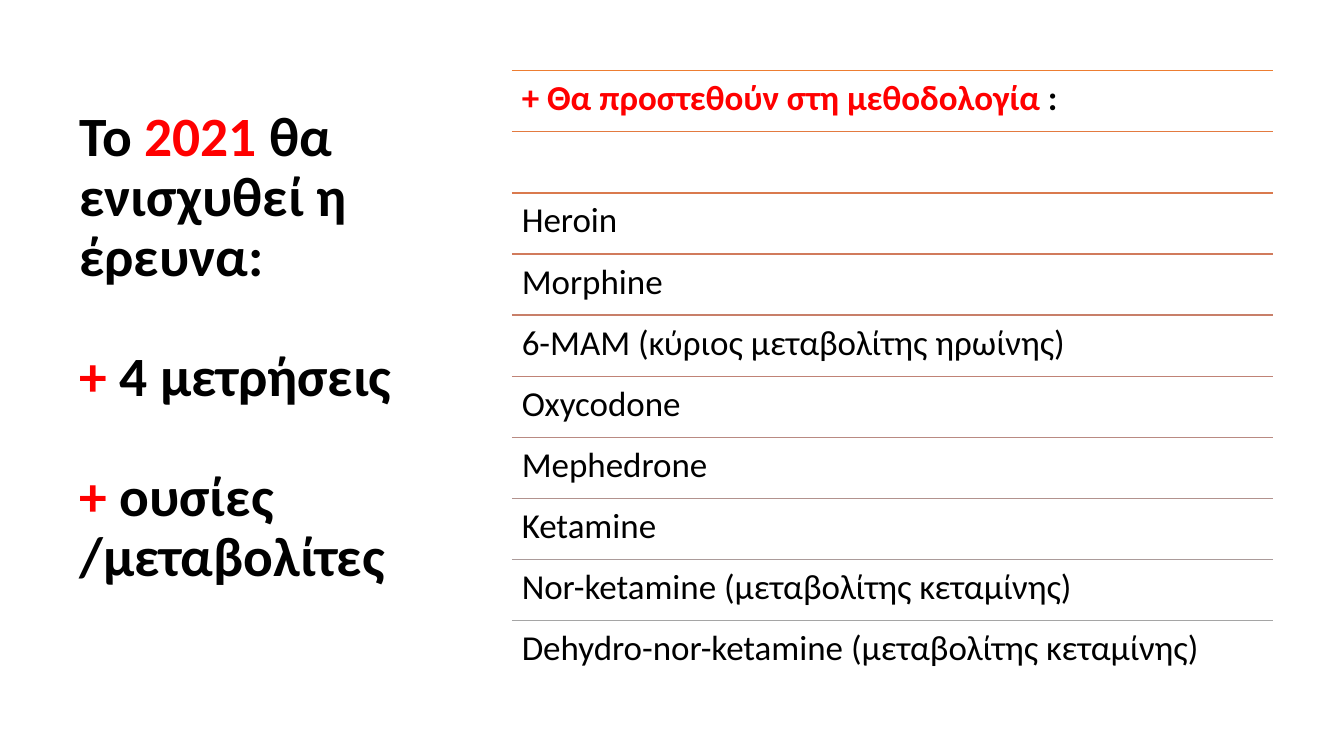
from colorsys import hls_to_rgb
from dataclasses import dataclass

from lxml.etree import SubElement
from pptx import Presentation
from pptx.dml.color import RGBColor
from pptx.enum.shapes import MSO_CONNECTOR
from pptx.enum.text import MSO_ANCHOR, MSO_AUTO_SIZE, PP_ALIGN
from pptx.oxml.ns import qn
from pptx.util import Cm, Pt


@dataclass(frozen=True)
class Theme:
    font: str = "Calibri"
    title_size: float = 39.6
    row_size: float = 25
    black: RGBColor = RGBColor(0x00, 0x00, 0x00)
    red: RGBColor = RGBColor(0xFF, 0x00, 0x00)
    # Rules fade from orange to grey: hue, lightness, saturation
    rule_first: tuple = (0.0674, 0.5608, 0.8393)
    rule_last: tuple = (0, 0.6471, 0)


theme = Theme()


def write_spans(para, spans, size, bold):
    """Fill a paragraph with (text, colour) spans."""
    para.alignment = PP_ALIGN.LEFT
    para.line_spacing = 0.9
    for text, color in spans:
        span = para.add_run()
        span.text = text
        span.font.name = theme.font
        span.font.size = Pt(size)
        span.font.bold = bold
        span.font.color.rgb = color


deck = Presentation()
deck.slide_width, deck.slide_height = Cm(33.87), Cm(19.05)
page = deck.slides.add_slide(deck.slide_layouts[5])

# Title: three statements, one line apart
title = page.shapes.title
title.left, title.top, title.width, title.height = Cm(1.75), Cm(1.78), Cm(9.5), Cm(15.52)
frame = title.text_frame
frame.word_wrap = True
frame.auto_size = MSO_AUTO_SIZE.NONE
frame.vertical_anchor = MSO_ANCHOR.MIDDLE
frame.margin_left = frame.margin_right = Cm(0.25)
frame.margin_top = Cm(0.13)
frame.margin_bottom = Cm(1.65)
statements = [
    [("Το ", theme.black), ("2021", theme.red), (" θα ενισχυθεί η έρευνα:", theme.black)],
    [("+ ", theme.red), ("4 μετρήσεις", theme.black)],
    [("+ ", theme.red), ("ουσίες /μεταβολίτες", theme.black)],
]
for number, spans in enumerate(statements):
    para = frame.add_paragraph() if number else frame.paragraphs[0]
    para.space_before = Pt(43 if number else 0)
    write_spans(para, spans, theme.title_size, True)

# Substance list: a rule above every row, the second row empty
substances = [
    "Heroin",
    "Morphine",
    "6-MAM (κύριος μεταβολίτης ηρωίνης)",
    "Oxycodone",
    "Mephedrone",
    "Ketamine",
    "Nor-ketamine (μεταβολίτης κεταμίνης)",
    "Dehydro-nor-ketamine (μεταβολίτης κεταμίνης)",
]
heading = [("+ Θα προστεθούν στη μεθοδολογία ", theme.red), (":", theme.black)]
rows = [heading, []] + [[(name, theme.black)] for name in substances]
left, top, width, pitch = Cm(12.9), Cm(1.78), Cm(19.18), Cm(1.54)

for number, spans in enumerate(rows):
    row_top = top + number * pitch
    share = number / (len(rows) - 1)
    shade = [a + (b - a) * share for a, b in zip(theme.rule_first, theme.rule_last)]
    rule = page.shapes.add_connector(
        MSO_CONNECTOR.STRAIGHT, left, row_top, left + width, row_top)
    rule.line.width = Pt(1)
    rule.line.color.rgb = RGBColor(*(round(255 * c) for c in hls_to_rgb(*shade)))
    SubElement(rule.element.spPr, qn("a:effectLst"))

    if spans:
        box = page.shapes.add_textbox(left, row_top, width, pitch)
        frame = box.text_frame
        frame.word_wrap = True
        frame.margin_left = frame.margin_right = Cm(0.25)
        frame.margin_top = frame.margin_bottom = Cm(0.25)
        write_spans(frame.paragraphs[0], spans, theme.row_size, number == 0)

deck.save("out.pptx")
